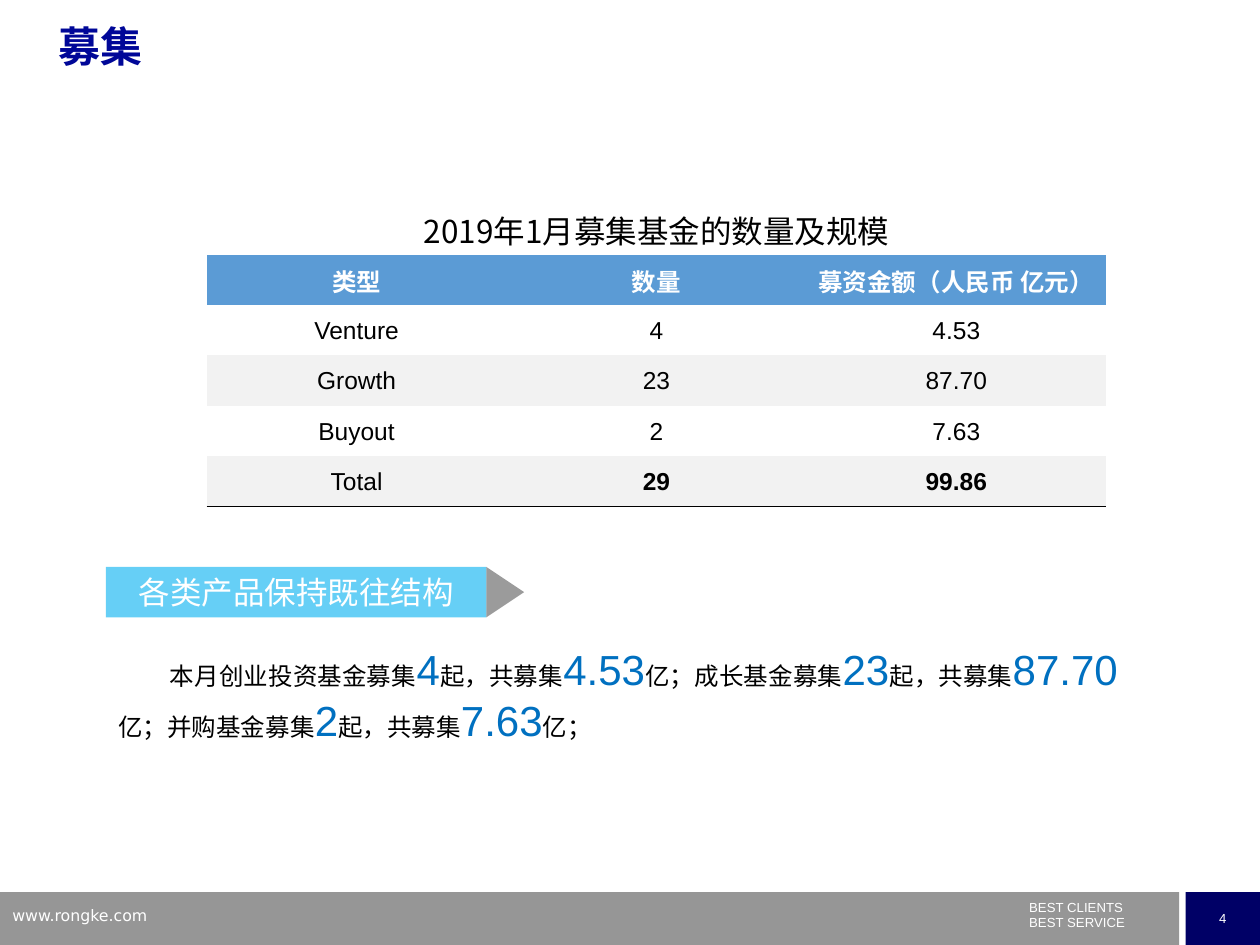
from pptx import Presentation
from pptx.dml.color import RGBColor as RGB
from pptx.enum.shapes import MSO_SHAPE as SHAPE
from pptx.enum.text import MSO_ANCHOR as ANCHOR, PP_ALIGN as ALIGN
from pptx.oxml.ns import qn
from pptx.util import Inches, Pt
from lxml.etree import SubElement as Sub

# Content
TITLE = "募集"
CAPTION = "2019年1月募集基金的数量及规模"
HEAD = ("类型", "数量", "募资金额（人民币 亿元）")
FUNDS = [
    ("Venture", "4", "4.53"),
    ("Growth", "23", "87.70"),
    ("Buyout", "2", "7.63"),
    ("Total", "29", "99.86"),
]
BANNER = "各类产品保持既往结构"
# Words and figures take turns
STORY = ["本月创业投资基金募集", "4", "起，共募集", "4.53", "亿；成长基金募集", "23",
         "起，共募集", "87.70", "亿；并购基金募集", "2", "起，共募集", "7.63", "亿；"]
SITE = "www.rongke.com"
MOTTO = ("BEST CLIENTS", "BEST SERVICE")
PAGE = "4"

# Style
SANS, CJK, CJK_JP, WEB = "Arial", "Noto Sans CJK SC", "Noto Sans CJK JP", "DejaVu Sans"
WHITE, BLACK = RGB(255, 255, 255), RGB(0, 0, 0)
GREY, NAVY, INK = RGB(0x96, 0x96, 0x96), RGB(0, 0, 0x66), RGB(0, 0x07, 0x98)
BLUE, SKY, SLATE = RGB(0, 0x70, 0xC0), RGB(0, 0xB0, 0xF0), RGB(0x59, 0x59, 0x59)
TOP, BAND = RGB(0x5B, 0x9B, 0xD5), RGB(0xF2, 0xF2, 0xF2)
NO_GRID = "{2D5ABB26-0587-4C30-8999-92F81FD0307C}"

# Layout
WIDE, HIGH = 10, 7.5
FOOT = 0.42
LEFT = 0.84
ROW, COL = 0.4, 2.38

prs = Presentation()
prs.slide_width, prs.slide_height = Inches(WIDE), Inches(HIGH)
slide = prs.slides.add_slide(prs.slide_layouts[6])


def style(font, size, color, face=SANS, bold=False):
    font.size, font.bold, font.name = Pt(size), bold, face
    font.color.rgb = color
    east = CJK if face == SANS else face
    font._element.find(qn("a:latin")).addnext(
        font._element.makeelement(qn("a:ea"), {"typeface": east}))


def write(frame, lines, *look, align=ALIGN.LEFT):
    for i, line in enumerate(lines):
        para = frame.paragraphs[0] if i == 0 else frame.add_paragraph()
        para.text, para.alignment = line, align
        style(para.font, *look)


def text_box(x, y, w, h):
    frame = slide.shapes.add_textbox(*map(Inches, (x, y, w, h))).text_frame
    frame.word_wrap = True
    return frame


def block(kind, x, y, w, h, color, alpha=None):
    shape = slide.shapes.add_shape(kind, *map(Inches, (x, y, w, h)))
    shape.shadow.inherit = False
    shape.fill.solid()
    shape.fill.fore_color.rgb = color
    shape.line.fill.background()
    if alpha:
        tone = shape._element.spPr.find(".//" + qn("a:srgbClr"))
        Sub(tone, qn("a:alpha"), val=str(alpha * 1000))
    shape.text_frame.vertical_anchor = ANCHOR.MIDDLE
    return shape


# Footer
base = HIGH - FOOT
block(SHAPE.RECTANGLE, 0, base, 9.36, FOOT, GREY)
page = block(SHAPE.RECTANGLE, 9.41, base, 0.59, FOOT, NAVY)
write(page.text_frame, [PAGE], 7.5, WHITE, align=ALIGN.CENTER)
motto = text_box(8.07, 7.14, 1.5, 0.29)
write(motto, MOTTO, 7.5, WHITE)
for para in motto.paragraphs:
    para.line_spacing = 0.5
motto.paragraphs[1].space_before = Pt(4.3)
write(text_box(0, 7.14, 2.4, 0.26), [SITE], 9, WHITE, WEB)

# Story with large figures
story = text_box(LEFT, 5.06, 8.13, 0.91).paragraphs[0]
story.alignment = ALIGN.JUSTIFY
story._p.get_or_add_pPr().set("indent", str(Inches(0.41)))
for i, part in enumerate(STORY):
    run = story.add_run()
    run.text = part
    style(run.font, *((24, BLUE) if i % 2 else (14, BLACK, CJK)))

# Banner with its arrow tip
banner = block(SHAPE.RECTANGLE, LEFT, 4.5, 3.02, ROW, SKY, 60)
write(banner.text_frame, [BANNER], 18, WHITE, CJK, align=ALIGN.CENTER)
tip = block(SHAPE.ISOSCELES_TRIANGLE, 3.81, 4.55, ROW, 0.3, SLATE, 60)
tip.rotation = 90

# Title
title = text_box(0.37, 0.16, 9, 0.7)
write(title, [TITLE], 24, INK, SANS, True)
title.paragraphs[0].line_spacing = 0.9

# Fund table
rows = [(CAPTION, "", ""), HEAD] + FUNDS
last = len(rows) - 1
table = slide.shapes.add_table(len(rows), 3, Inches(1.64), Inches(1.62),
                               Inches(3 * COL), Inches(len(rows) * ROW)).table
table._tbl.tblPr.find(qn("a:tableStyleId")).text = NO_GRID
table.first_row = table.horz_banding = False
for col in table.columns:
    col.width = Inches(COL)
for row in table.rows:
    row.height = Inches(ROW)
table.cell(0, 0).merge(table.cell(0, 2))

for r, row in enumerate(rows):
    for c, word in enumerate(row):
        cell = table.cell(r, c)
        cell.vertical_anchor = ANCHOR.MIDDLE
        cell.margin_left = cell.margin_right = cell.margin_top = Inches(0.01)
        cell.margin_bottom = 0
        if r == 0:
            look = 18, BLACK, CJK_JP
        elif r == 1:
            look = 14, WHITE, CJK, True
        else:
            look = 14, BLACK, SANS, r == last and c > 0
        if word:
            write(cell.text_frame, [word], *look, align=ALIGN.CENTER)
        if r == last:
            edge = Sub(cell._tc.get_or_add_tcPr(), qn("a:lnB"), w=str(Pt(1)))
            Sub(Sub(edge, qn("a:solidFill")), qn("a:srgbClr"), val=str(BLACK))
        if r % 2:
            cell.fill.solid()
            cell.fill.fore_color.rgb = TOP if r == 1 else BAND
        else:
            cell.fill.background()

prs.save("out.pptx")
